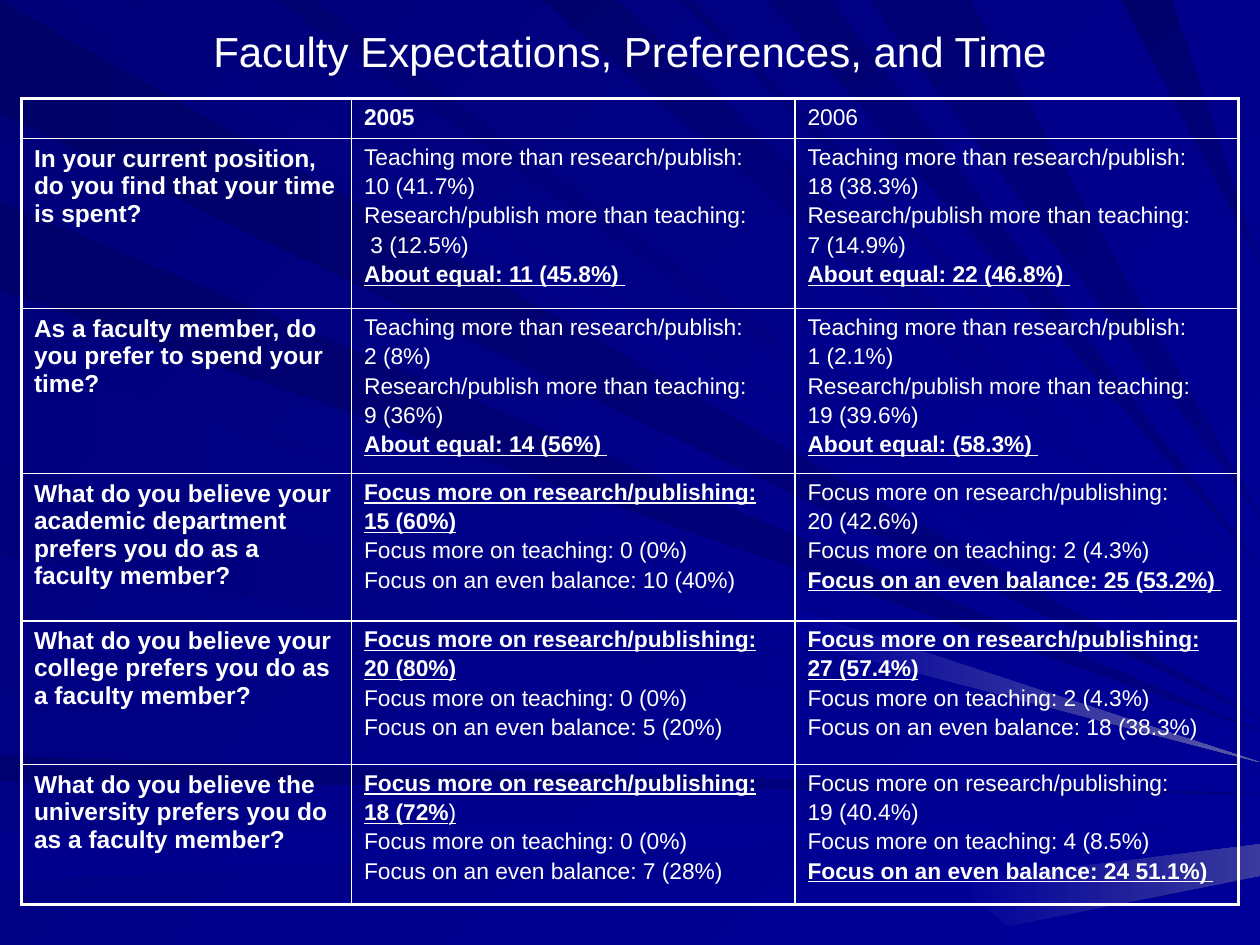
from lxml import etree
from pptx import Presentation
from pptx.dml.color import RGBColor
from pptx.enum.text import MSO_ANCHOR, PP_ALIGN
from pptx.oxml.ns import qn
from pptx.util import Inches, Pt

MIDDLE, CENTER = MSO_ANCHOR.MIDDLE, PP_ALIGN.CENTER
FONT, WHITE = "Arial", "FFFFFF"
NAVY, BLUE, GLOW = "000080", "000099", "5A5AA6"
THIN, THICK = Pt(1), Pt(2.25)
W, H = 10, 7.5

# Each ray runs from a span on one edge to a tip on the right edge:
# span start, span end, tip height, start colour, end colour
LEFT_RAYS = [
    (0, 0.9, 5.7, "000069", NAVY),
    (6, 6.2, 6.3, "000071", NAVY),
    (6.6, 7, 6.5, "00008C", BLUE),
    (1.6, 2.3, 5.8, "00006B", NAVY),
    (2.8, 3.4, 6, "00007E", BLUE),
    (3.7, 4.4, 6.1, "00007B", BLUE),
]
TOP_RAYS = [
    (0.3, 1, 5.6, "00007B", BLUE),
    (2.2, 2.5, 5.5, "000070", BLUE),
    (4.3, 4.9, 4.9, "00006D", BLUE),
    (5.4, 5.5, 4.6, "000073", BLUE),
    (6.1, 6.6, 4.5, "000073", NAVY),
    (6.9, 7.7, 4.1, "000073", NAVY),
    (8.9, 9.3, 2.1, "00006B", NAVY),
]

TEACH, RESEARCH = "Teaching more than research/publish:", "Research/publish more than teaching:"
FOCUS = "Focus more on research/publishing:"

# A leading * marks an emphasised line; what follows | in it is not bold.
COLUMNS = [2.62, 3.52, 3.52]
ROW_HEIGHTS = [0.32, 1.35, 1.25, 1.17, 1.14, 1.11]
ROWS = [
    ("", ["2005"], ["2006"]),
    ("In your current position, do you find that your time is spent?",
     [TEACH, "10 (41.7%)", RESEARCH, " 3 (12.5%)", "*About equal: 11 (45.8%)| "],
     [TEACH, "18 (38.3%)", RESEARCH, "7 (14.9%)", "*About equal: 22 (46.8%)| "]),
    ("As a faculty member, do you prefer to spend your time?",
     [TEACH, "2 (8%)", RESEARCH, "9 (36%)", "*About equal: 14 (56%)| "],
     [TEACH, "1 (2.1%)", RESEARCH, "19 (39.6%)", "*About equal: (58.3%)| "]),
    ("What do you believe your academic department prefers you do as a faculty member?",
     ["*" + FOCUS, "*15 (60%)", "Focus more on teaching: 0 (0%)",
      "Focus on an even balance: 10 (40%)"],
     [FOCUS, "20 (42.6%)", "Focus more on teaching: 2 (4.3%)",
      "*Focus on an even balance: 25 (53.2%)| "]),
    ("What do you believe your college prefers you do as a faculty member?",
     ["*" + FOCUS, "*20 (80%)", "Focus more on teaching: 0 (0%)",
      "Focus on an even balance: 5 (20%)"],
     ["*" + FOCUS, "*27 (57.4%)", "Focus more on teaching: 2 (4.3%)",
      "Focus on an even balance: 18 (38.3%)"]),
    ("What do you believe the university prefers you do as a faculty member?",
     ["*" + FOCUS, "*18 (72%|)", "Focus more on teaching: 0 (0%)",
      "Focus on an even balance: 7 (28%)"],
     [FOCUS, "19 (40.4%)", "Focus more on teaching: 4 (8.5%)",
      "*Focus on an even balance: 24 51.1%)| "]),
]


def rgb(color):
    return RGBColor.from_string(color)


def fill_gradient(fill, start, end, angle):
    """Fill from start to end; the angle runs clockwise."""
    fill.gradient()
    fill.gradient_angle = -angle % 360
    for stop, color in zip(fill.gradient_stops, (start, end)):
        stop.color.rgb = rgb(color)


def set_font(p, size, bold=False, underline=False):
    f = p.font
    f.name, f.size, f.bold, f.underline = FONT, Pt(size), bold, underline
    f.color.rgb = rgb(WHITE)


def add_ray(s, corners, start, end, angle):
    first, *rest = [(Inches(x), Inches(y)) for x, y in corners]
    builder = s.shapes.build_freeform(*first)
    builder.add_line_segments(rest, close=True)
    sp = builder.convert_to_shape()
    sp.shadow.inherit = False
    sp.line.fill.background()
    fill_gradient(sp.fill, start, end, angle)


def add_background(s):
    fill_gradient(s.background.fill, "000078", BLUE, 45)
    for a, b, tip, start, end in LEFT_RAYS:
        add_ray(s, [(0, a), (0, b), (W, tip)], start, end, 0)
    for a, b, tip, start, end in TOP_RAYS:
        add_ray(s, [(a, 0), (b, 0), (W, tip)], start, end, 45)
    add_ray(s, [(6.35, 4.85), (6.35, 5.1), (W, 6.05)], BLUE, GLOW, 0)
    add_ray(s, [(7.55, 7), (8, 7.35), (W, 6.95), (W, 6.7)], BLUE, "39399E", 0)


def add_title(s, text, x, y, w, h):
    tf = s.shapes.add_textbox(x, y, w, h).text_frame
    tf.word_wrap, tf.vertical_anchor = True, MIDDLE
    p = tf.paragraphs[0]
    p.text, p.alignment = text, CENTER
    set_font(p, 24)


def set_borders(cell, left, right, top, bottom):
    tc_pr = cell._tc.get_or_add_tcPr()
    widths = {"a:lnL": left, "a:lnR": right, "a:lnT": top, "a:lnB": bottom}
    for i, (tag, width) in enumerate(widths.items()):
        ln = etree.Element(qn(tag), w=str(width))
        solid = etree.SubElement(ln, qn("a:solidFill"))
        etree.SubElement(solid, qn("a:srgbClr"), val=WHITE)
        tc_pr.insert(i, ln)


def write_answers(tf, lines, bold):
    for i, line in enumerate(lines):
        p = tf.add_paragraph() if i else tf.paragraphs[0]
        if i:
            p.space_before = Pt(2.2)
        strong = line.startswith("*")
        set_font(p, 13, bold or strong, strong)
        main_text, _, light = line.removeprefix("*").partition("|")
        p.add_run().text = main_text
        if light:
            r = p.add_run()
            r.text, r.font.bold = light, False


def add_survey_table(s, x, y):
    n_rows, n_cols = len(ROWS), len(COLUMNS)
    table = s.shapes.add_table(n_rows, n_cols, x, y, Inches(sum(COLUMNS)),
                               Inches(sum(ROW_HEIGHTS))).table
    table.first_row = table.horz_banding = False
    for column, width in zip(table.columns, COLUMNS):
        column.width = Inches(width)
    for i, (question, *answers) in enumerate(ROWS):
        table.rows[i].height = Inches(ROW_HEIGHTS[i])
        p = table.cell(i, 0).text_frame.paragraphs[0]
        p.text = question
        set_font(p, 14 if question else 13, bold=True)
        for j, lines in enumerate(answers, 1):
            write_answers(table.cell(i, j).text_frame, lines, bold=(i == 0 and j == 1))
        for j in range(n_cols):
            cell = table.cell(i, j)
            cell.fill.background()
            edges = (j == 0, j == n_cols - 1, i == 0, i == n_rows - 1)
            set_borders(cell, *(THICK if outer else THIN for outer in edges))


def main():
    prs = Presentation()
    prs.slide_width, prs.slide_height = Inches(W), Inches(H)
    s = prs.slides.add_slide(prs.slide_layouts[6])
    add_background(s)
    add_title(s, "Faculty Expectations, Preferences, and Time",
              Inches(0.5), Inches(0.14), Inches(9), Inches(0.53))
    add_survey_table(s, Inches(0.17), Inches(0.78))
    prs.save("out.pptx")


if __name__ == "__main__":
    main()
